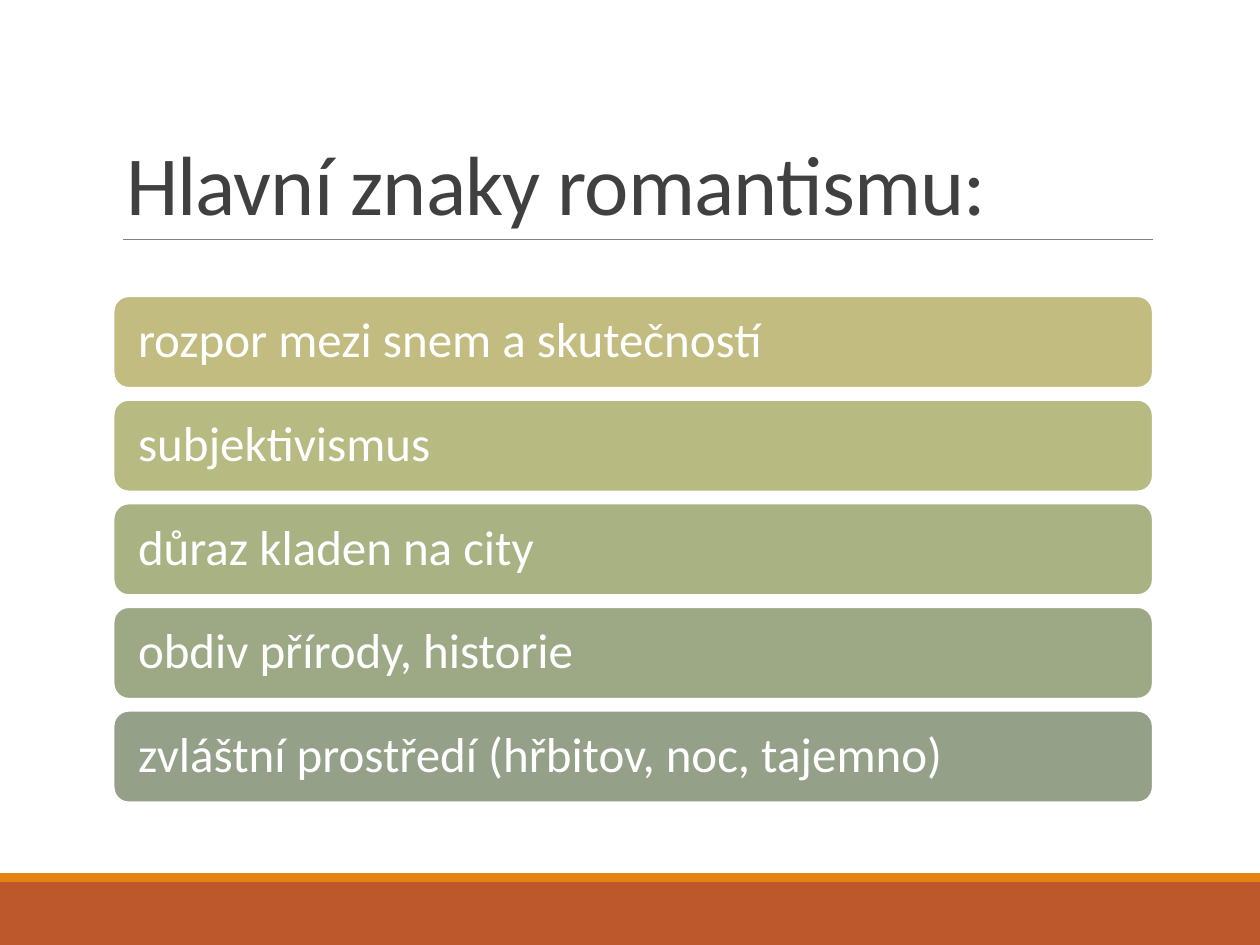
from dataclasses import dataclass

from lxml import etree
from pptx import Presentation
from pptx.dml.color import RGBColor
from pptx.enum import shapes, text
from pptx.oxml.ns import qn
from pptx.util import Inches, Pt


@dataclass(frozen=True)
class Theme:
    font: str = "Calibri"
    title_size: float = 48
    card_size: float = 28
    title: str = "404040"
    rule: str = "808080"
    white: str = "FFFFFF"
    band: str = "BD582C"
    stripe: str = "E48312"
    cards: tuple = ("C2BC80", "B7BA81", "A8B283", "9DA985", "94A088")


THEME = Theme()
FEATURES = (
    "rozpor mezi snem a skutečností",
    "subjektivismus",
    "důraz kladen na city",
    "obdiv přírody, historie",
    "zvláštní prostředí (hřbitov, noc, tajemno)",
)


def rgb(value):
    return RGBColor.from_string(value)


def add_block(s, kind, box, fill):
    sp = s.shapes.add_shape(kind, *box)
    sp.shadow.inherit = False
    sp.fill.solid()
    sp.fill.fore_color.rgb = rgb(fill)
    sp.line.fill.background()
    return sp


def style_paragraph(p, size, color, spacing):
    p.alignment = text.PP_ALIGN.LEFT
    p.line_spacing = spacing
    p.font.name = THEME.font
    p.font.size = Pt(size)
    p.font.color.rgb = rgb(color)


def add_footer(s, left, top, width, height):
    """Draw the bottom band with a thin stripe along its top."""
    stripe = Inches(0.07)
    rect = shapes.MSO_SHAPE.RECTANGLE
    add_block(s, rect, (left, top + stripe, width, height - stripe), THEME.band)
    add_block(s, rect, (left, top, width, stripe), THEME.stripe)


def add_title(s, left, top, width, height, title):
    """Place the title with a rule under it."""
    sp = s.shapes.title
    sp.left, sp.top, sp.width, sp.height = left, top, width, height
    tf = sp.text_frame
    tf.text = title
    tf.word_wrap = True
    tf.auto_size = text.MSO_AUTO_SIZE.NONE
    tf.vertical_anchor = text.MSO_ANCHOR.BOTTOM
    p = tf.paragraphs[0]
    style_paragraph(p, THEME.title_size, THEME.title, 0.85)
    p.runs[0]._r.get_or_add_rPr().set("spc", "-50")

    bottom = top + height
    rule = s.shapes.add_connector(
        shapes.MSO_CONNECTOR.STRAIGHT,
        left + Inches(0.08), bottom, left + width, bottom)
    rule.line.color.rgb = rgb(THEME.rule)
    rule.line.width = Pt(0.5)
    etree.SubElement(rule._element.spPr, qn("a:effectLst"))


def add_cards(s, left, top, width, height, labels):
    """Stack one rounded card per label, evenly spaced over the box."""
    card_height = Inches(0.73)
    pitch = (height - card_height) / (len(labels) - 1)
    for i, (label, fill) in enumerate(zip(labels, THEME.cards)):
        box = (left, round(top + i * pitch), width, card_height)
        sp = add_block(s, shapes.MSO_SHAPE.ROUNDED_RECTANGLE, box, fill)
        sp.line.color.rgb = rgb(THEME.white)
        sp.line.width = Pt(1.25)
        tf = sp.text_frame
        tf.text = label
        tf.word_wrap = True
        tf.vertical_anchor = text.MSO_ANCHOR.MIDDLE
        tf.margin_left = tf.margin_right = Inches(0.16)
        style_paragraph(tf.paragraphs[0], THEME.card_size, THEME.white, 0.9)


def main():
    prs = Presentation()
    prs.slide_width, prs.slide_height = Inches(10), Inches(7.5)
    s = prs.slides.add_slide(prs.slide_layouts[5])
    left, width = Inches(0.9), Inches(8.25)
    add_footer(s, 0, Inches(6.93), prs.slide_width, Inches(0.57))
    add_title(s, left, Inches(0.31), width, Inches(1.59), "Hlavní znaky romantismu:")
    add_cards(s, left, Inches(2.35), width, Inches(4.02), FEATURES)
    prs.save("out.pptx")


if __name__ == "__main__":
    main()
